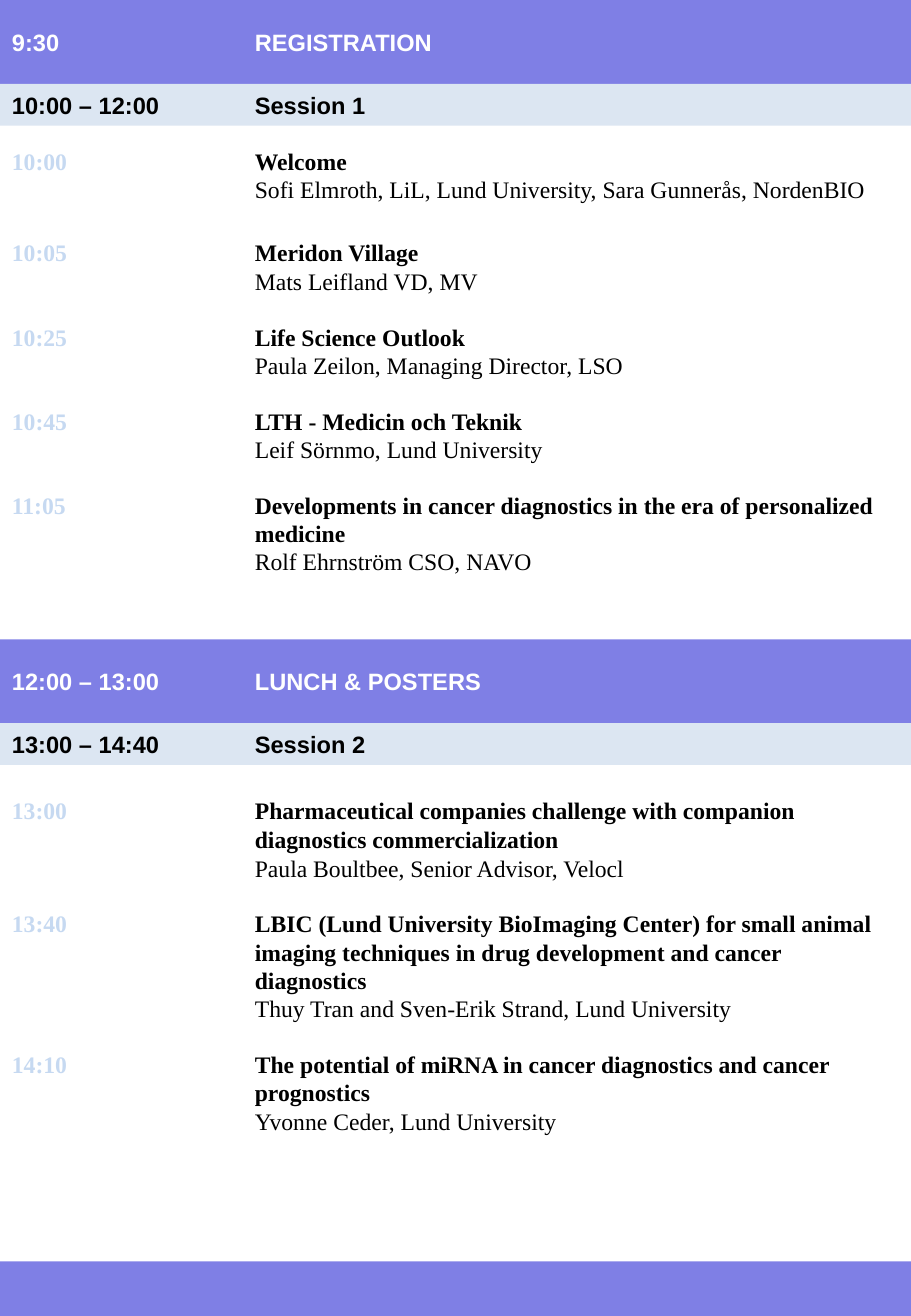
from dataclasses import dataclass

import pptx
import pptx.dml.color
import pptx.enum.shapes
import pptx.enum.text
import pptx.oxml.ns
import pptx.util
from lxml import etree


@dataclass(frozen=True)
class Theme:
    bar: str = "0000CC"
    bar_opacity: int = 50
    band: str = "DCE6F2"
    light: str = "FFFFFF"
    dark: str = "000000"
    time: str = "C6D9F1"
    heading_font: str = "Arial"
    talk_font: str = "Times New Roman"
    size: float = 14
    tall_size: float = 18
    talk_gap: float = 16.1


THEME = Theme()
WIDTH, HEIGHT = pptx.util.Inches(7.5), pptx.util.Inches(10.83)
COLUMN = WIDTH / 15
ROW = pptx.util.Inches(0.69) / 2
TIME_COLUMNS = 4
FOOTER_ROW = 30.09

SESSIONS = [
    (0, 3.36, 10.72, ("9:30", "REGISTRATION"), ("10:00 – 12:00", "Session 1"), [
        ("10:00", ["Welcome"],
         "Sofi Elmroth, LiL, Lund University, Sara Gunnerås, NordenBIO", False),
        ("10:05", ["Meridon Village"], "Mats Leifland VD, MV", True),
        ("10:25", ["Life Science Outlook"], "Paula Zeilon, Managing Director, LSO", False),
        ("10:45", ["LTH - Medicin och Teknik"], "Leif Sörnmo, Lund University", False),
        ("11:05", ["Developments in cancer diagnostics in the era of personalized", "medicine"],
         "Rolf Ehrnström CSO, NAVO", False),
    ]),
    (15.25, 3.42, 9.36, ("12:00 – 13:00", "LUNCH & POSTERS"), ("13:00 – 14:40", "Session 2"), [
        ("13:00", ["Pharmaceutical companies challenge with companion",
                   "diagnostics commercialization"],
         "Paula Boultbee, Senior Advisor, Velocl", True),
        ("13:40", ["LBIC (Lund University BioImaging Center) for small animal",
                   "imaging techniques in drug development and cancer", "diagnostics"],
         "Thuy Tran and Sven-Erik Strand, Lund University", False),
        ("14:10", ["The potential of miRNA in cancer diagnostics and cancer", "prognostics"],
         "Yvonne Ceder, Lund University", False),
    ]),
]


def rows(count):
    """Return the length of a number of grid rows."""
    return pptx.util.Emu(round(count * ROW))


def style_run(run, font, color, bold=True, size=THEME.size):
    """Format one run."""
    run.font.name = font
    run.font.size = pptx.util.Pt(size)
    run.font.bold = bold
    run.font.color.rgb = pptx.dml.color.RGBColor.from_string(color)


def add_time_tab(paragraph):
    """Place a tab stop at the right edge of the time column."""
    paragraph.alignment = pptx.enum.text.PP_ALIGN.LEFT
    properties = paragraph._p.get_or_add_pPr()
    stops = etree.SubElement(properties, pptx.oxml.ns.qn("a:tabLst"))
    position = str(round(TIME_COLUMNS * COLUMN))
    etree.SubElement(stops, pptx.oxml.ns.qn("a:tab"), pos=position, algn="l")


def add_strip(slide, top, height, fill, opacity=100):
    """Draw a strip across the whole slide."""
    strip = slide.shapes.add_shape(
        pptx.enum.shapes.MSO_SHAPE.RECTANGLE, 0, top, WIDTH, height)
    strip.shadow.inherit = False
    strip.line.fill.background()
    strip.fill.solid()
    strip.fill.fore_color.rgb = pptx.dml.color.RGBColor.from_string(fill)
    if opacity < 100:
        color = strip.fill._xPr.find(".//" + pptx.oxml.ns.qn("a:srgbClr"))
        etree.SubElement(color, pptx.oxml.ns.qn("a:alpha"), val=str(opacity * 1000))
    return strip


def add_heading(strip, heading, color):
    """Write a time and a heading into a strip."""
    frame = strip.text_frame
    frame.word_wrap = True
    frame.vertical_anchor = pptx.enum.text.MSO_ANCHOR.MIDDLE
    frame.text = "\t".join(heading)
    add_time_tab(frame.paragraphs[0])
    style_run(frame.paragraphs[0].runs[0], THEME.heading_font, color)


def write_title(paragraph, time, title_lines, tall):
    """Write the time and title lines of a talk."""
    paragraph.text = time
    add_time_tab(paragraph)
    style_run(paragraph.runs[0], THEME.talk_font, THEME.time)
    for index, line in enumerate(title_lines):
        if index:
            paragraph.add_line_break()
            line_break = paragraph._p.findall(pptx.oxml.ns.qn("a:br"))[-1]
            etree.SubElement(line_break, pptx.oxml.ns.qn("a:rPr"), sz=str(THEME.size * 100))
        tab, title = paragraph.add_run(), paragraph.add_run()
        tab.text, title.text = "\t", line
        tab_size = THEME.tall_size if tall and not index else THEME.size
        style_run(tab, THEME.talk_font, THEME.dark, size=tab_size)
        style_run(title, THEME.talk_font, THEME.dark)


def add_talks(slide, top, height, talks):
    """List the talks of a session with their speakers."""
    frame = slide.shapes.add_textbox(0, top, WIDTH, height).text_frame
    frame.word_wrap = True
    for index, (time, title_lines, speaker, tall) in enumerate(talks):
        heading = frame.add_paragraph() if index else frame.paragraphs[0]
        write_title(heading, time, title_lines, tall)
        if index:
            heading.space_before = pptx.util.Pt(THEME.talk_gap)
        presenter = frame.add_paragraph()
        presenter.text = "\t" + speaker
        add_time_tab(presenter)
        style_run(presenter.runs[0], THEME.talk_font, THEME.dark, bold=False)


def main():
    """Build the programme slide."""
    deck = pptx.Presentation()
    deck.slide_width, deck.slide_height = WIDTH, HEIGHT
    slide = deck.slides.add_slide(deck.slide_layouts[6])
    for start, talks_row, talks_rows, event, session, talks in SESSIONS:
        bar = add_strip(slide, rows(start), rows(2), THEME.bar, THEME.bar_opacity)
        add_heading(bar, event, THEME.light)
        band = add_strip(slide, rows(start + 2), rows(1), THEME.band)
        add_heading(band, session, THEME.dark)
        add_talks(slide, rows(start + talks_row), rows(talks_rows), talks)
    footer_top = rows(FOOTER_ROW)
    add_strip(slide, footer_top, HEIGHT - footer_top, THEME.bar, THEME.bar_opacity)
    deck.save("out.pptx")


if __name__ == "__main__":
    main()
